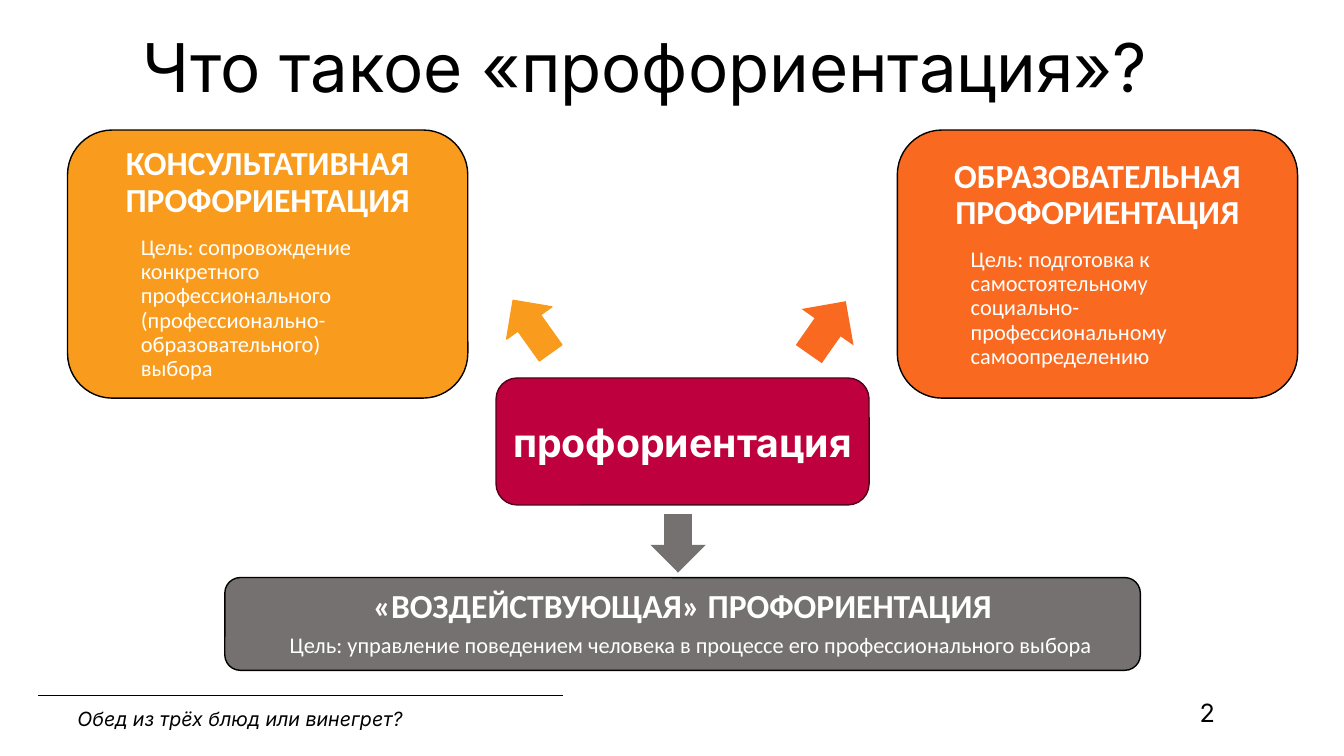
"""Builds the slide that explains three kinds of career guidance."""
from dataclasses import dataclass

from lxml import etree
from pptx import Presentation
from pptx.dml.color import RGBColor
from pptx.enum.shapes import MSO_CONNECTOR, MSO_SHAPE
from pptx.enum.text import MSO_ANCHOR, PP_ALIGN
from pptx.oxml.ns import qn
from pptx.util import Inches, Pt

ROUNDED = MSO_SHAPE.ROUNDED_RECTANGLE
DOWN_ARROW = MSO_SHAPE.DOWN_ARROW
STRAIGHT = MSO_CONNECTOR.STRAIGHT
CENTER, LEFT = PP_ALIGN.CENTER, PP_ALIGN.LEFT
TOP, MIDDLE = MSO_ANCHOR.TOP, MSO_ANCHOR.MIDDLE
TITLE_ONLY = 5


@dataclass(frozen=True)
class Theme:
    black: str = "000000"
    white: str = "FFFFFF"
    amber: str = "F99B1C"
    orange: str = "F96920"
    crimson: str = "BE003E"
    wine: str = "53001B"
    grey: str = "767171"
    main_font: str = "Inter"
    card_font: str = "Calibri"
    title: int = 48
    core: int = 28
    heading: int = 24
    number: int = 18
    goal: int = 16
    footer: int = 14


THEME = Theme()


@dataclass(frozen=True)
class Box:
    left: float
    top: float
    width: float
    height: float

    def lengths(self) -> list:
        return [Inches(value) for value in (self.left, self.top, self.width, self.height)]


@dataclass(frozen=True)
class Line:
    text: str
    size: int
    font: str = THEME.main_font
    color: str = THEME.black
    bold: bool = False
    italic: bool = False
    align: PP_ALIGN = LEFT
    spacing: float = 1.0
    gap: float = 0
    indent: float = 0


@dataclass(frozen=True)
class Card:
    box: Box
    fill: str
    headings: tuple[str, ...]
    goal: str
    gap: float


@dataclass(frozen=True)
class Arrow:
    box: Box
    fill: str
    rotation: float = 0


@dataclass(frozen=True)
class Label:
    box: Box
    line: Line


CARD_TOP, CARD_WIDTH, CARD_HEIGHT = 1.29, 3.97, 2.66
CARDS = (
    Card(Box(0.67, CARD_TOP, CARD_WIDTH, CARD_HEIGHT), THEME.amber,
         ("КОНСУЛЬТАТИВНАЯ", "ПРОФОРИЕНТАЦИЯ"),
         "Цель: сопровождение конкретного профессионального "
         "(профессионально-образовательного)\nвыбора", 12),
    Card(Box(8.9, CARD_TOP, CARD_WIDTH, CARD_HEIGHT), THEME.orange,
         ("ОБРАЗОВАТЕЛЬНАЯ", "ПРОФОРИЕНТАЦИЯ"),
         "Цель: подготовка к самостоятельному \n"
         "социально-профессиональному самоопределению", 12),
    Card(Box(2.23, 5.73, 9.08, 0.92), THEME.grey,
         ("«ВОЗДЕЙСТВУЮЩАЯ» ПРОФОРИЕНТАЦИЯ",),
         "Цель: управление поведением человека в процессе его профессионального выбора", 5.5),
)
ARROWS = (
    Arrow(Box(6.45, 5.1, 0.55, 0.58), THEME.grey),
    Arrow(Box(7.89, 2.93, 0.63, 0.64), THEME.orange, 215),
    Arrow(Box(5, 2.92, 0.55, 0.64), THEME.amber, 144.5),
)
LABELS = (
    Label(Box(0.67, 6.96, 5.51, 0.34),
          Line("Обед из трёх блюд или винегрет?", THEME.footer, italic=True)),
    Label(Box(11.8, 6.87, 0.69, 0.17), Line("2", THEME.number)),
)
TITLE = Label(Box(0.63, 0.2, 11.54, 0.91),
              Line("Что такое «профориентация»?", THEME.title, align=CENTER))
CORE = Label(Box(4.92, 3.75, 3.7, 1.26),
             Line("профориентация", THEME.core, color=THEME.white, bold=True, align=CENTER))


def apply(target, values: dict) -> None:
    for name, value in values.items():
        setattr(target, name, value)


def write(frame, lines: list[Line], anchor: MSO_ANCHOR, wrap: bool = True) -> None:
    apply(frame, {"word_wrap": wrap, "vertical_anchor": anchor})
    for index, line in enumerate(lines):
        paragraph = frame.add_paragraph() if index else frame.paragraphs[0]
        apply(paragraph, {"text": line.text, "alignment": line.align,
                          "line_spacing": line.spacing, "space_before": Pt(line.gap)})
        if line.indent:
            apply(paragraph, {"level": 1})
            properties = paragraph._p.get_or_add_pPr()
            properties.set("marL", str(Inches(line.indent)))
            properties.set("indent", "0")
        for run in paragraph.runs:
            apply(run.font, {"name": line.font, "size": Pt(line.size),
                             "bold": line.bold, "italic": line.italic})
            run.font.color.rgb = RGBColor.from_string(line.color)
        for line_break in paragraph._p.findall(qn("a:br")):
            etree.SubElement(line_break, qn("a:rPr"), sz=str(line.size * 100))


def add_block(slide, kind: MSO_SHAPE, box: Box, fill: str, outline: str):
    shape = slide.shapes.add_shape(kind, *box.lengths())
    shape.shadow.inherit = False
    shape.fill.solid()
    shape.fill.fore_color.rgb = RGBColor.from_string(fill)
    shape.line.color.rgb = RGBColor.from_string(outline)
    shape.line.width = Pt(1)
    return shape


def add_card(slide, card: Card) -> None:
    common = {"font": THEME.card_font, "color": THEME.white, "spacing": 0.9}
    lines = [Line(text, THEME.heading, bold=True, align=CENTER, **common)
             for text in card.headings]
    lines.append(Line(card.goal, THEME.goal, gap=card.gap, indent=0.5, **common))
    shape = add_block(slide, ROUNDED, card.box, card.fill, THEME.black)
    write(shape.text_frame, lines, MIDDLE)


def add_arrow(slide, arrow: Arrow) -> None:
    shape = add_block(slide, DOWN_ARROW, arrow.box, arrow.fill, arrow.fill)
    shape.rotation = arrow.rotation
    if arrow.fill != THEME.amber:
        shape.line.fill.background()


def add_footer_rule(slide) -> None:
    rule = slide.shapes.add_connector(
        STRAIGHT, Inches(0.38), Inches(6.9), Inches(5.58), Inches(6.9))
    rule.line.color.rgb = RGBColor.from_string(THEME.black)
    rule.line.width = Pt(0.5)
    etree.SubElement(rule._element.spPr, qn("a:effectLst"))


def main() -> None:
    presentation = Presentation()
    apply(presentation, {"slide_width": Inches(13.33), "slide_height": Inches(7.5)})
    slide = presentation.slides.add_slide(presentation.slide_layouts[TITLE_ONLY])
    title = slide.shapes.title
    apply(title, dict(zip(("left", "top", "width", "height"), TITLE.box.lengths())))
    write(title.text_frame, [TITLE.line], TOP)
    for arrow in ARROWS:
        add_arrow(slide, arrow)
    add_footer_rule(slide)
    for label in LABELS:
        write(slide.shapes.add_textbox(*label.box.lengths()).text_frame, [label.line], TOP)
    core = add_block(slide, ROUNDED, CORE.box, THEME.crimson, THEME.wine)
    write(core.text_frame, [CORE.line], MIDDLE, wrap=False)
    for card in CARDS:
        add_card(slide, card)
    presentation.save("out.pptx")


if __name__ == "__main__":
    main()
